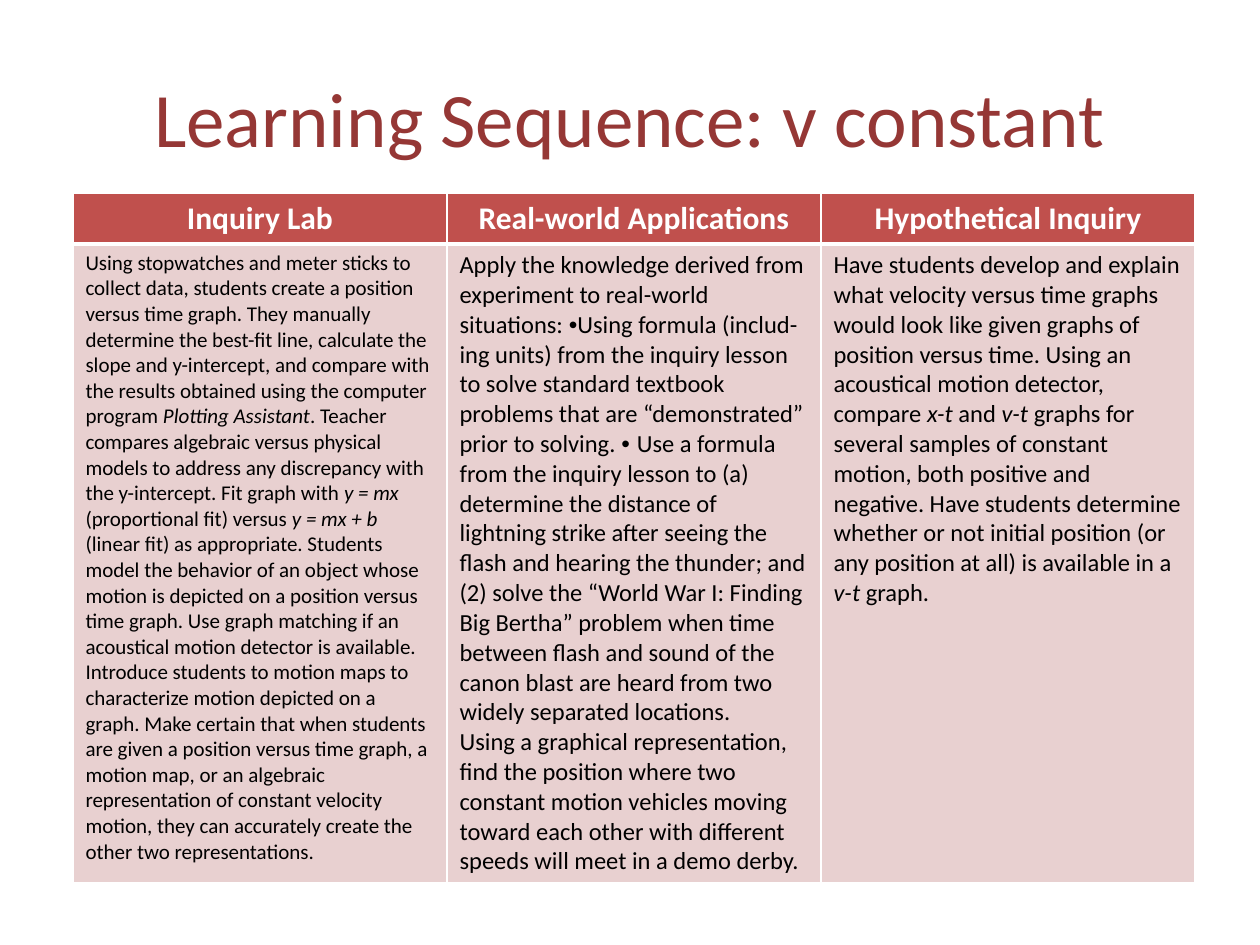
from dataclasses import dataclass

from lxml import etree
from pptx import Presentation
from pptx import util as u
from pptx.dml import color
from pptx.enum import text
from pptx.oxml import ns


@dataclass(frozen=True)
class Theme:
    font: str = "Calibri"
    bullet_font: str = "Arial"
    title: str = "953735"
    header_fill: str = "C0504D"
    body_fill: str = "E8D0D0"
    white: str = "FFFFFF"
    black: str = "000000"
    title_size: int = 44
    header_size: int = 18
    body_size: int = 14
    dense_size: int = 12
    thin_line: int = 1
    header_line: int = 3


THEME = Theme()
PLAIN, ITALIC, BULLET = "plain", "italic", "bullet"

HEADERS = ["Inquiry Lab", "Real-world Applications", "Hypothetical Inquiry"]

INQUIRY_LAB = [[
    ("Using stopwatches and meter sticks to collect data, students create a position "
     "versus time graph. They manually determine the best-fit line, calculate the slope "
     "and y-intercept, and compare with the results obtained using the computer program ", PLAIN),
    ("Plotting Assistant", ITALIC),
    (". Teacher compares algebraic versus physical models to address any discrepancy "
     "with the y-intercept. Fit graph with ", PLAIN),
    ("y = mx", ITALIC),
    (" (proportional fit) versus ", PLAIN),
    ("y = mx + b", ITALIC),
    (" (linear fit) as appropriate. Students model the behavior of an object whose motion "
     "is depicted on a position versus time graph. Use graph matching if an acoustical "
     "motion detector is available. Introduce students to motion maps to characterize "
     "motion depicted on a graph. Make certain that when students are given a position "
     "versus time graph, a motion map, or an algebraic representation of constant velocity "
     "motion, they can accurately create the other two representations.", PLAIN),
]]

APPLICATIONS = [
    [
        ("Apply the knowledge derived from experiment to real-world situations: ", PLAIN),
        ("•", BULLET),
        ("Using formula (includ- ing units) from the inquiry lesson to solve standard "
         "textbook problems that are “demonstrated” prior to solving. ", PLAIN),
        ("• ", BULLET),
        ("Use a formula from the inquiry lesson to (a) determine the distance of lightning "
         "strike after seeing the flash and hearing the thunder; and (2) solve the “World "
         "War I: Finding Big Bertha” problem when time between flash and sound of the canon "
         "blast are heard from two widely separated locations.", PLAIN),
    ],
    [
        ("Using a graphical representation, find the position where two constant motion "
         "vehicles moving toward each other with different speeds will meet in a demo "
         "derby.", PLAIN),
    ],
]

HYPOTHETICAL = [[
    ("Have students develop and explain what velocity versus time graphs would look like "
     "given graphs of position versus time. Using an acoustical motion detector, compare ", PLAIN),
    ("x-t", ITALIC),
    (" and ", PLAIN),
    ("v-t", ITALIC),
    (" graphs for several samples of constant motion, both positive and negative. Have "
     "students determine whether or not initial position (or any position at all) is "
     "available in a ", PLAIN),
    ("v-t", ITALIC),
    (" graph.", PLAIN),
]]

BODIES = [
    (INQUIRY_LAB, THEME.dense_size),
    (APPLICATIONS, THEME.body_size),
    (HYPOTHETICAL, THEME.body_size),
]


def add_run(paragraph, content, size, rgb, style=PLAIN, bold=False):
    run = paragraph.add_run()
    run.text = content
    run.font.name = THEME.bullet_font if style == BULLET else THEME.font
    run.font.size = u.Pt(size)
    run.font.color.rgb = color.RGBColor.from_string(rgb)
    run.font.bold = bold
    run.font.italic = style == ITALIC


def add_title(slide, content):
    title = slide.shapes.title
    title.left, title.top = u.Cm(0), u.Cm(0.76)
    title.width, title.height = u.Cm(25.4), u.Cm(3.18)
    title.text_frame.vertical_anchor = text.MSO_ANCHOR.MIDDLE
    paragraph = title.text_frame.paragraphs[0]
    paragraph.alignment = text.PP_ALIGN.CENTER
    add_run(paragraph, content, THEME.title_size, THEME.title)


def set_borders(cell, top, bottom):
    properties = cell._tc.get_or_add_tcPr()
    widths = {"L": THEME.thin_line, "R": THEME.thin_line, "T": top, "B": bottom}
    for side, width in widths.items():
        line = etree.SubElement(properties, ns.qn(f"a:ln{side}"), w=str(u.Pt(width)))
        fill = etree.SubElement(line, ns.qn("a:solidFill"))
        etree.SubElement(fill, ns.qn("a:srgbClr"), val=THEME.white)


def fill_cell(cell, rgb):
    cell.fill.solid()
    cell.fill.fore_color.rgb = color.RGBColor.from_string(rgb)


def write_header(cell, content):
    set_borders(cell, THEME.thin_line, THEME.header_line)
    fill_cell(cell, THEME.header_fill)
    paragraph = cell.text_frame.paragraphs[0]
    paragraph.alignment = text.PP_ALIGN.CENTER
    add_run(paragraph, content, THEME.header_size, THEME.white, bold=True)


def write_body(cell, paragraphs, size):
    set_borders(cell, THEME.header_line, THEME.thin_line)
    fill_cell(cell, THEME.body_fill)
    frame = cell.text_frame
    for index, runs in enumerate(paragraphs):
        paragraph = frame.add_paragraph() if index else frame.paragraphs[0]
        for content, style in runs:
            add_run(paragraph, content, size, THEME.black, style)


def add_sequence_table(slide):
    row_heights = [u.Cm(1.03), u.Cm(12.85)]
    column_width = u.Cm(7.54)
    table = slide.shapes.add_table(
        len(row_heights), len(HEADERS), u.Cm(1.47), u.Cm(3.89),
        column_width * len(HEADERS), sum(row_heights),
    ).table
    for row, height in zip(table.rows, row_heights):
        row.height = height
    for column, (header, (paragraphs, size)) in enumerate(zip(HEADERS, BODIES)):
        table.columns[column].width = column_width
        write_header(table.cell(0, column), header)
        write_body(table.cell(1, column), paragraphs, size)


def main():
    presentation = Presentation()
    presentation.slide_width, presentation.slide_height = u.Cm(25.4), u.Cm(19.05)
    slide = presentation.slides.add_slide(presentation.slide_layouts.get_by_name("Title Only"))
    add_title(slide, "Learning Sequence: v constant")
    add_sequence_table(slide)
    presentation.save("out.pptx")


if __name__ == "__main__":
    main()
